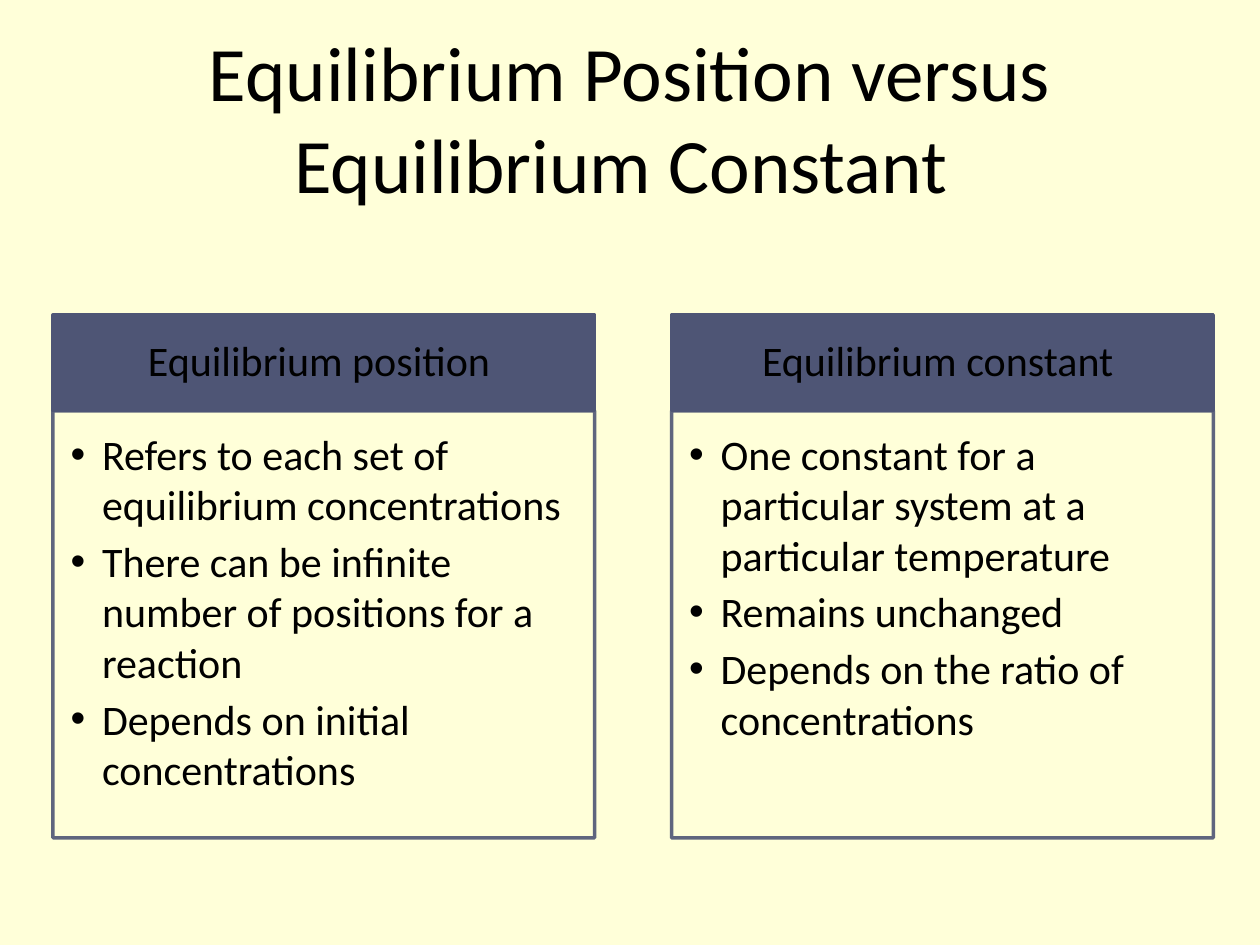
import dataclasses

import pptx
import pptx.dml.color
import pptx.enum.shapes
import pptx.enum.text
import pptx.oxml.ns
import pptx.util
from lxml import etree

PAGE_WIDTH, PAGE_HEIGHT = 10, 7.5
FIRST_COLUMN, COLUMN_WIDTH, COLUMN_STEP = 0.42, 4.3, 4.91
HEADER_TOP, HEADER_HEIGHT, BODY_HEIGHT = 2.5, 0.76, 3.39
CREAM, SLATE, BLACK = "FFFFD9", "4E5575", "000000"

CENTER = pptx.enum.text.PP_ALIGN.CENTER
LEFT = pptx.enum.text.PP_ALIGN.LEFT
TOP = pptx.enum.text.MSO_ANCHOR.TOP
MIDDLE = pptx.enum.text.MSO_ANCHOR.MIDDLE


@dataclasses.dataclass
class TextStyle:
    size: float
    anchor: pptx.enum.text.MSO_ANCHOR
    insets: tuple[float, float, float, float]
    paragraph: dict
    bulleted: bool = False


@dataclasses.dataclass
class Card:
    heading: str
    points: list[str]


TITLE = TextStyle(44, MIDDLE, (0.1, 0.05, 0.1, 0.05), {"alignment": CENTER})
HEADING = TextStyle(24, MIDDLE, (0.19, 0.11, 0.19, 0.11),
                    {"alignment": CENTER, "line_spacing": 0.9})
POINTS = TextStyle(24, TOP, (0.14, 0.14, 0.19, 0.21),
                   {"alignment": LEFT, "space_after": pptx.util.Pt(3.6)}, bulleted=True)

CARDS = [
    Card("Equilibrium position ", [
        "Refers to each set of equilibrium concentrations",
        "There can be infinite number of positions for a reaction",
        "Depends on initial concentrations",
    ]),
    Card("Equilibrium constant ", [
        "One constant for a particular system at a particular temperature",
        "Remains unchanged",
        "Depends on the ratio of concentrations",
    ]),
]


def color(value: str) -> pptx.dml.color.RGBColor:
    return pptx.dml.color.RGBColor.from_string(value)


def set_attributes(target, values: dict) -> None:
    for name, value in values.items():
        setattr(target, name, value)


def add_bullet(para) -> None:
    properties = para._p.get_or_add_pPr()
    indent = pptx.util.Inches(0.25)
    properties.set("marL", str(indent))
    properties.set("indent", str(-indent))
    for tag, name, value in (("a:buFont", "typeface", "Arial"), ("a:buChar", "char", "•")):
        etree.SubElement(properties, pptx.oxml.ns.qn(tag)).set(name, value)


def write_text(box, lines: list[str], style: TextStyle) -> None:
    frame = box.text_frame
    margins = ("margin_left", "margin_top", "margin_right", "margin_bottom")
    set_attributes(frame, {"word_wrap": True, "vertical_anchor": style.anchor})
    set_attributes(frame, dict(zip(margins, map(pptx.util.Inches, style.insets))))
    for index, line in enumerate(lines):
        para = frame.add_paragraph() if index else frame.paragraphs[0]
        set_attributes(para, style.paragraph)
        if style.bulleted:
            add_bullet(para)
        span = para.add_run()
        span.text = line
        set_attributes(span.font, {"name": "Calibri", "size": pptx.util.Pt(style.size)})
        span.font.color.rgb = color(BLACK)


def add_panel(group, left: float, top: float, height: float, filled: bool):
    """Add a slate-edged rectangle; an unfilled one has a slightly transparent edge."""
    box = group.shapes.add_shape(
        pptx.enum.shapes.MSO_SHAPE.RECTANGLE,
        *map(pptx.util.Inches, (left, top, COLUMN_WIDTH, height)))
    box.shadow.inherit = False
    box.line.color.rgb = color(SLATE)
    box.line.width = pptx.util.Pt(2)
    if filled:
        box.fill.solid()
        box.fill.fore_color.rgb = color(SLATE)
    else:
        box.fill.background()
        edge = box.line._ln.find(".//" + pptx.oxml.ns.qn("a:srgbClr"))
        etree.SubElement(edge, pptx.oxml.ns.qn("a:alpha")).set("val", "90000")
    return box


def add_card(group, column: int, card: Card) -> None:
    left = FIRST_COLUMN + column * COLUMN_STEP
    header = add_panel(group, left, HEADER_TOP, HEADER_HEIGHT, filled=True)
    write_text(header, [card.heading], HEADING)
    body = add_panel(group, left, HEADER_TOP + HEADER_HEIGHT, BODY_HEIGHT, filled=False)
    write_text(body, card.points, POINTS)


def main() -> None:
    deck = pptx.Presentation()
    deck.slide_width = pptx.util.Inches(PAGE_WIDTH)
    deck.slide_height = pptx.util.Inches(PAGE_HEIGHT)
    page = deck.slides.add_slide(deck.slide_layouts[6])
    page.background.fill.solid()
    page.background.fill.fore_color.rgb = color(CREAM)

    title = page.shapes.add_textbox(
        *map(pptx.util.Inches,
             (0.05 * PAGE_WIDTH, 0.04 * PAGE_HEIGHT, 0.9 * PAGE_WIDTH, 1.25)))
    write_text(title, ["Equilibrium Position versus Equilibrium Constant "], TITLE)

    group = page.shapes.add_group_shape()
    for column, card in enumerate(CARDS):
        add_card(group, column, card)
    deck.save("out.pptx")


if __name__ == "__main__":
    main()
